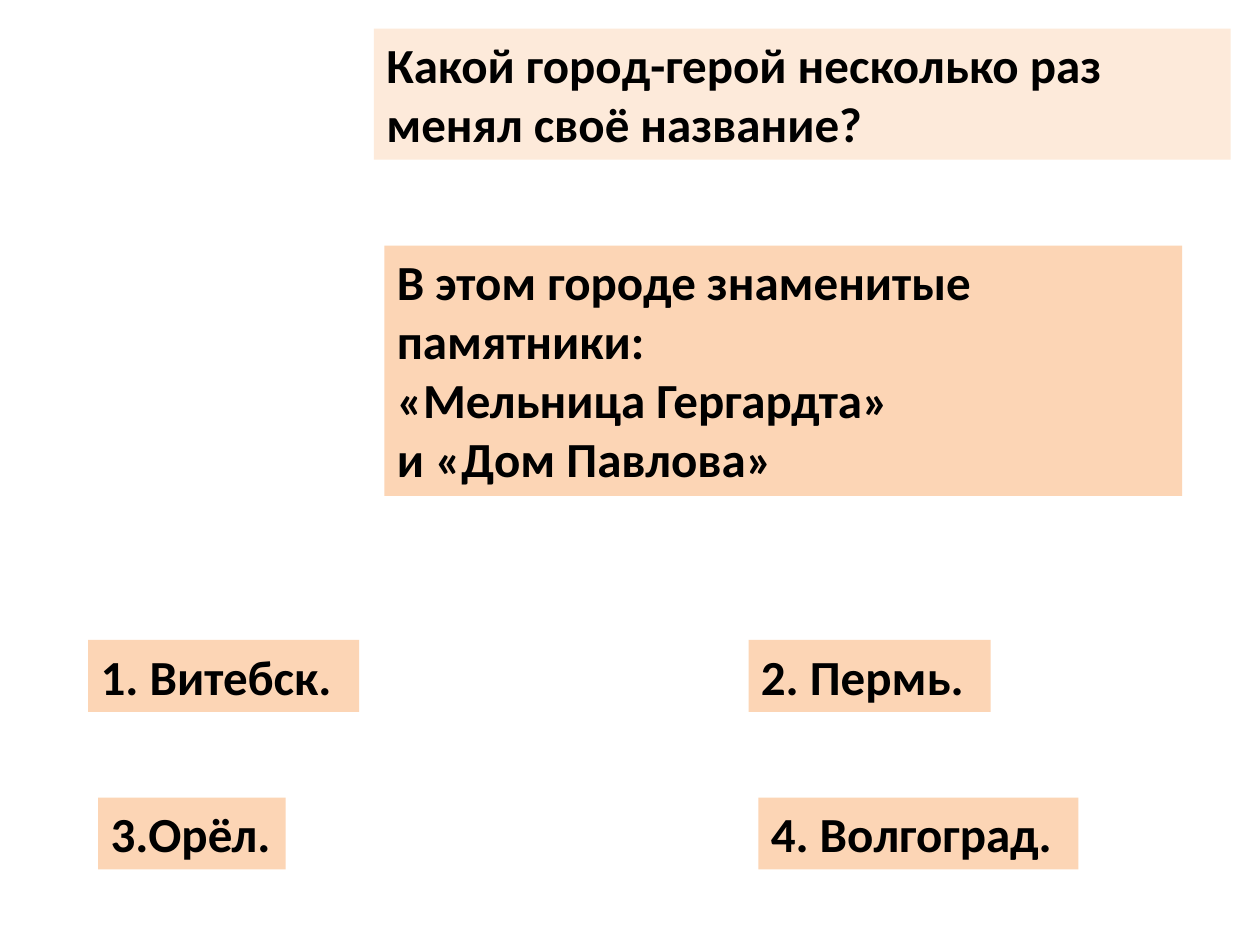
from dataclasses import dataclass

from pptx import Presentation
from pptx.dml.color import RGBColor
from pptx.enum.text import MSO_ANCHOR, MSO_AUTO_SIZE
from pptx.slide import Slide
from pptx.util import Cm, Pt

COLORS = {"question": "FDEADA", "panel": "FCD5B5", "text": "000000"}
FONT = "Calibri"
FONT_SIZE = 28

ANSWER_COLUMNS = (1.78, 15.09)
ANSWER_ROWS = (12.9, 16.08)
ANSWER_ROW_SHIFT = 0.2
ANSWER_HEIGHT = 1.45


@dataclass(frozen=True)
class Panel:
    lines: tuple[str, ...]
    left: float
    top: float
    width: float
    height: float
    color: str = "panel"


@dataclass(frozen=True)
class Answer:
    text: str
    width: float


QUESTION = Panel(
    ("Какой город-герой несколько раз менял своё название?",),
    7.54, 0.58, 17.27, 2.64, "question",
)
HINT = Panel(
    (
        "В этом городе знаменитые памятники:",
        "«Мельница Гергардта»",
        "и «Дом Павлова»",
    ),
    7.75, 4.95, 16.08, 5.05,
)
ANSWERS = (
    Answer("1. Витебск.", 5.46),
    Answer("2. Пермь.", 4.88),
    Answer("3.Орёл.", 3.78),
    Answer("4. Волгоград.", 6.45),
)


def draw_panel(slide: Slide, panel: Panel) -> None:
    box = slide.shapes.add_textbox(
        Cm(panel.left), Cm(panel.top), Cm(panel.width), Cm(panel.height)
    )
    box.fill.solid()
    box.fill.fore_color.rgb = RGBColor.from_string(COLORS[panel.color])
    frame = box.text_frame
    frame.word_wrap = True
    frame.auto_size = MSO_AUTO_SIZE.SHAPE_TO_FIT_TEXT
    frame.vertical_anchor = MSO_ANCHOR.TOP
    for index, line in enumerate(panel.lines):
        paragraph = frame.add_paragraph() if index else frame.paragraphs[0]
        run = paragraph.add_run()
        run.text = line
        run.font.name = FONT
        run.font.size = Pt(FONT_SIZE)
        run.font.bold = True
        run.font.color.rgb = RGBColor.from_string(COLORS["text"])


def place_answer(index: int, answer: Answer) -> Panel:
    row, column = divmod(index, len(ANSWER_COLUMNS))
    left = ANSWER_COLUMNS[column] + row * ANSWER_ROW_SHIFT
    return Panel((answer.text,), left, ANSWER_ROWS[row], answer.width, ANSWER_HEIGHT)


def main() -> None:
    presentation = Presentation()
    presentation.slide_width = Cm(25.4)
    presentation.slide_height = Cm(19.05)
    slide = presentation.slides.add_slide(presentation.slide_layouts[6])
    draw_panel(slide, QUESTION)
    draw_panel(slide, HINT)
    for index, answer in enumerate(ANSWERS):
        draw_panel(slide, place_answer(index, answer))
    presentation.save("out.pptx")


if __name__ == "__main__":
    main()
